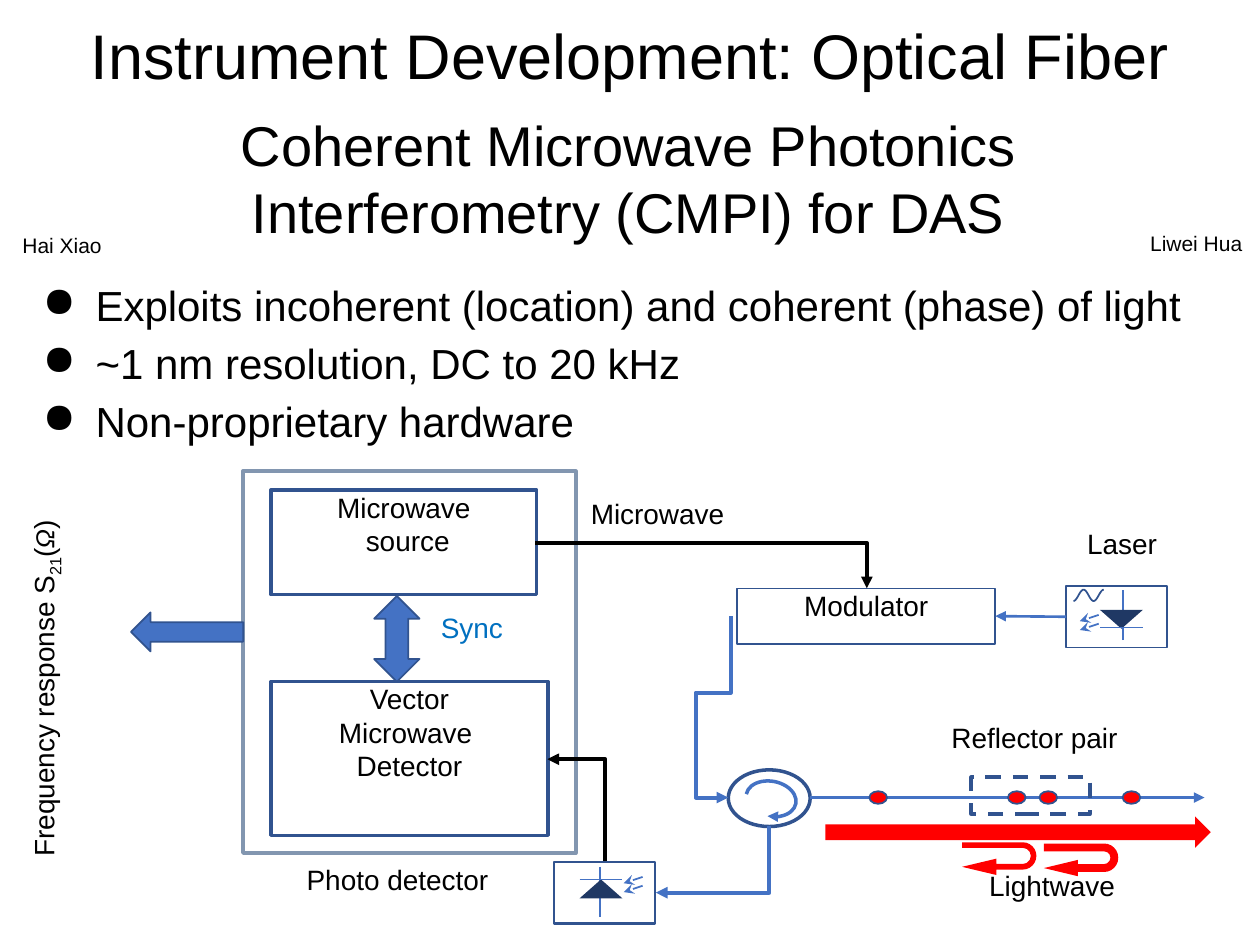
import math

import pptx
import pptx.dml.color
import pptx.enum.dml
import pptx.enum.shapes
import pptx.enum.text
import pptx.oxml
import pptx.oxml.ns
import pptx.util

RGBColor = pptx.dml.color.RGBColor
BLACK = RGBColor(0x00, 0x00, 0x00)
BLUE = RGBColor(0x44, 0x72, 0xC4)
EDGE = RGBColor(0x31, 0x53, 0x8F)
NAVY = RGBColor(0x1F, 0x38, 0x64)
SLATE = RGBColor(0x82, 0x96, 0xB0)
SKY = RGBColor(0x00, 0x70, 0xC0)
RED = RGBColor(0xFF, 0x00, 0x00)

SHAPE = pptx.enum.shapes.MSO_SHAPE
CONNECTOR = pptx.enum.shapes.MSO_CONNECTOR
CENTER = pptx.enum.text.PP_ALIGN.CENTER
LEFT = pptx.enum.text.PP_ALIGN.LEFT
Pt = pptx.util.Pt
qn = pptx.oxml.ns.qn

presentation = pptx.Presentation()
presentation.slide_width = pptx.util.Inches(10)
presentation.slide_height = pptx.util.Inches(7.5)
slide = presentation.slides.add_slide(presentation.slide_layouts[6])
shapes = slide.shapes

# Grid: 10 columns by 7.5 rows of square cells
CELL = presentation.slide_width // 10


def add_shape(kind, at, fill=None, edge=None, width=1, turn=0, adjust=()):
    shape = shapes.add_shape(kind, *[round(length * CELL) for length in at])
    shape.shadow.inherit = False
    shape.rotation = turn
    for index, value in enumerate(adjust):
        shape.adjustments[index] = value
    if fill is None:
        shape.fill.background()
    else:
        shape.fill.solid()
        shape.fill.fore_color.rgb = fill
    if edge is None:
        shape.line.fill.background()
    else:
        shape.line.color.rgb = edge
        shape.line.width = Pt(width)
    return shape


def add_line(begin, end, color=BLUE, width=1, arrow=None, kind=CONNECTOR.STRAIGHT):
    line = shapes.add_connector(kind, *[round(length * CELL) for length in (*begin, *end)])
    line.line.color.rgb = color
    line.line.width = Pt(width)
    properties = line._element.spPr
    pptx.oxml.ns  # effect list follows the line element
    properties.append(properties.makeelement(qn("a:effectLst"), {}))
    if arrow:
        outline = line.line._get_or_add_ln()
        outline.append(outline.makeelement(qn("a:tailEnd"), {"type": arrow}))
    return line


# Boxes of the block diagram
source = add_shape(SHAPE.RECTANGLE, (2.15, 3.89, 2.11, 0.83), edge=EDGE, width=2)
detector = add_shape(SHAPE.RECTANGLE, (2.15, 5.41, 2.2, 1.22), edge=EDGE, width=2)
modulator = add_shape(SHAPE.RECTANGLE, (5.85, 4.67, 2.05, 0.44), edge=EDGE)
photodiode = add_shape(SHAPE.RECTANGLE, (4.4, 6.84, 0.8, 0.49), edge=EDGE, width=1.25)
laser = add_shape(SHAPE.RECTANGLE, (8.46, 4.65, 0.8, 0.49), edge=EDGE)
add_shape(SHAPE.UP_DOWN_ARROW, (2.97, 4.73, 0.36, 0.68), BLUE, EDGE)
add_shape(SHAPE.RECTANGLE, (1.93, 3.74, 2.64, 3.03), edge=SLATE, width=2.25)
add_shape(SHAPE.RIGHT_ARROW, (1.04, 4.86, 0.89, 0.31), BLUE, EDGE, turn=180)

# Circulator
add_shape(SHAPE.OVAL, (5.78, 6.11, 0.65, 0.45), edge=EDGE, width=2)
rotation_arc = add_shape(SHAPE.ARC, (5.98, 6.14, 0.28, 0.4), edge=BLUE, width=2,
                         turn=280.9, adjust=(162, 108.45))
arc_outline = rotation_arc.line._get_or_add_ln()
arc_outline.append(arc_outline.makeelement(qn("a:tailEnd"), {"type": "triangle"}))

# Straight links: laser to modulator, and the fiber
laser_link = add_line((8.46, 4.89), (7.9, 4.89), width=1.5, arrow="triangle")
laser_link.begin_connect(laser, 1)
laser_link.end_connect(modulator, 3)
add_line((6.43, 6.33), (9.56, 6.33), width=2, arrow="triangle")

# Bent links: frame before turning, preset, turn, mirror, bends, color
for (left, top, width, height), preset, turn, mirrored, bends, color in (
    ((5.39, 6.37, 0.53, 0.9), "bentConnector2", 90, False, (), BLUE),
    ((5.07, 5.6, 1.44, 0.02), "bentConnector4", 90, False, (42200, 1385100), BLUE),
    ((4.25, 4.31, 2.63, 0.36), "bentConnector2", 0, False, (), BLACK),
    ((4.17, 6.2, 0.81, 0.46), "bentConnector2", 90, True, (), BLACK),
):
    link = add_line((left, top), (left + width, top + height), color, 2.25,
                    "triangle", CONNECTOR.ELBOW)
    geometry = link._element.spPr.find(qn("a:prstGeom"))
    geometry.set("prst", preset)
    guides = geometry.find(qn("a:avLst"))
    for number, bend in enumerate(bends, 1):
        guides.append(guides.makeelement(
            qn("a:gd"), {"name": f"adj{number}", "fmla": f"val {bend}"}))
    frame = link._element.spPr.find(qn("a:xfrm"))
    frame.set("rot", str(turn * 60000))
    if mirrored:
        frame.set("flipH", "1")

# Diode symbols: the laser's is the detector's turned half round
for x, y, sign in ((4.8, 7.08, 1), (8.87, 4.88, -1)):
    add_line((x - 0.04 * sign, y - 0.2 * sign), (x - 0.04 * sign, y + 0.2 * sign))
    add_shape(SHAPE.ISOSCELES_TRIANGLE,
              (x - 0.03 * sign - 0.17, y - 0.03 * sign - 0.07, 0.34, 0.15),
              NAVY, turn=0 if sign > 0 else 180)
    add_line((x - 0.2 * sign, y - 0.1 * sign), (x + 0.14 * sign, y - 0.1 * sign))
    for rise in (0, 0.07):
        outer = (x + 0.3 * sign, y - (0.05 + rise) * sign)
        inner = (x + 0.15 * sign, y - rise * sign)
        # Light enters the detector and leaves the laser
        ray = (outer, inner) if sign > 0 else (inner, outer)
        add_line(*ray, arrow="stealth")

# Laser wave
STEPS = 36
wave_points = [((8.52 + 0.24 * step / STEPS) * CELL,
                (4.725 + 0.045 * math.cos(3 * math.pi * step / STEPS)) * CELL)
               for step in range(STEPS + 1)]
builder = shapes.build_freeform(*[round(value) for value in wave_points[0]])
builder.add_line_segments(wave_points[1:], close=False)
wave = builder.convert_to_shape()
wave.shadow.inherit = False
wave.fill.background()
wave.line.color.rgb = EDGE
wave.line.width = Pt(1)

# Reflectors on the fiber, and the pair's frame
for x in (6.9, 8, 8.25, 8.91):
    add_shape(SHAPE.OVAL, (x, 6.28, 0.14, 0.1), RED, EDGE)
pair_frame = add_shape(SHAPE.RECTANGLE, (7.71, 6.17, 0.94, 0.29), edge=EDGE, width=2.25)
pair_frame.line.dash_style = pptx.enum.dml.MSO_LINE.DASH

# Lightwave and its reflections
add_shape(SHAPE.U_TURN_ARROW, (7.8, 6.52, 0.26, 0.59), RED, turn=90,
          adjust=(0.17, 0.25, 1.05, 0.44, 1))
add_shape(SHAPE.U_TURN_ARROW, (8.45, 6.53, 0.26, 0.59), RED, turn=90,
          adjust=(0.24, 0.25, 1.04, 0.44, 1))
add_shape(SHAPE.RIGHT_ARROW, (6.55, 6.48, 3.06, 0.25), RED)

# Text: a box of the diagram or a frame on the grid, lines, size, color, alignment
for holder, lines, size, color, alignment in (
    (source, ("Microwave", " source"), 16, BLACK, CENTER),
    (detector, ("Vector", "Microwave ", "Detector"), 16, BLACK, CENTER),
    (modulator, ("Modulator",), 16, BLACK, CENTER),
    ((0, 0, 10, 0.87), ("Instrument Development: Optical Fiber",), 36, BLACK, CENTER),
    ((1.05, 0.83, 7.88, 1.06),
     ("Coherent Microwave Photonics Interferometry (CMPI) for DAS",), 32, BLACK, CENTER),
    ((9.03, 1.78, 0.97, 0.3), ("Liwei Hua",), 12, BLACK, LEFT),
    ((0.08, 1.8, 0.9, 0.48), ("Hai Xiao",), 12, BLACK, LEFT),
    ((3.2, 4.8, 1.09, 0.51), ("Sync",), 16, SKY, CENTER),
    ((1.77, 6.8, 2.77, 0.51), ("Photo detector",), 16, BLACK, CENTER),
    ((8.33, 4.13, 1.15, 0.51), ("Laser",), 16, BLACK, CENTER),
    ((6.55, 5.67, 3.32, 0.51), ("Reflector pair",), 16, BLACK, CENTER),
    ((7.02, 6.84, 2.66, 0.51), ("Lightwave",), 16, BLACK, CENTER),
    ((4.59, 3.89, 2.01, 0.51), ("Microwave",), 16, BLACK, LEFT),
    ((0.16, 2.11, 9.71, 1.97),
     ("Exploits incoherent (location) and coherent (phase) of light",
      "~1 nm resolution, DC to 20 kHz", "Non-proprietary hardware"), 24, BLACK, LEFT),
    ((-1.6, 5.05, 4.35, 0.83), ("Frequency response S", "21", "(", "Ω", ")"),
     16, BLACK, CENTER),
):
    is_frame = isinstance(holder, tuple)
    shape = shapes.add_textbox(*[round(length * CELL) for length in holder]) if is_frame else holder
    text_frame = shape.text_frame
    text_frame.word_wrap = True
    text_frame.vertical_anchor = pptx.enum.text.MSO_ANCHOR.TOP
    if size == 36:
        text_frame.vertical_anchor = pptx.enum.text.MSO_ANCHOR.MIDDLE
    if not is_frame:
        text_frame.margin_top = text_frame.margin_bottom = 0
    is_axis_label = "Ω" in lines
    for number, line_text in enumerate(lines):
        if number and not is_axis_label:
            paragraph = text_frame.add_paragraph()
        else:
            paragraph = text_frame.paragraphs[0]
        paragraph.alignment = alignment
        if size == 24:
            paragraph.line_spacing = 1.15
            properties = paragraph._p.get_or_add_pPr()
            properties.set("marL", str(round(0.5 * CELL)))
            properties.set("indent", str(round(-0.42 * CELL)))
            properties.append(properties.makeelement(qn("a:buChar"), {"char": "●"}))
        run = paragraph.add_run()
        run.text = line_text
        run.font.name = "Calibri" if line_text == "Ω" else "Arial"
        run.font.size = Pt(size)
        run.font.color.rgb = color
        if line_text == "Ω":
            run.font.italic = True
        if line_text == "21":
            run.font._element.set("baseline", "-25000")
    if is_axis_label:
        shape.rotation = 270

presentation.save("out.pptx")
